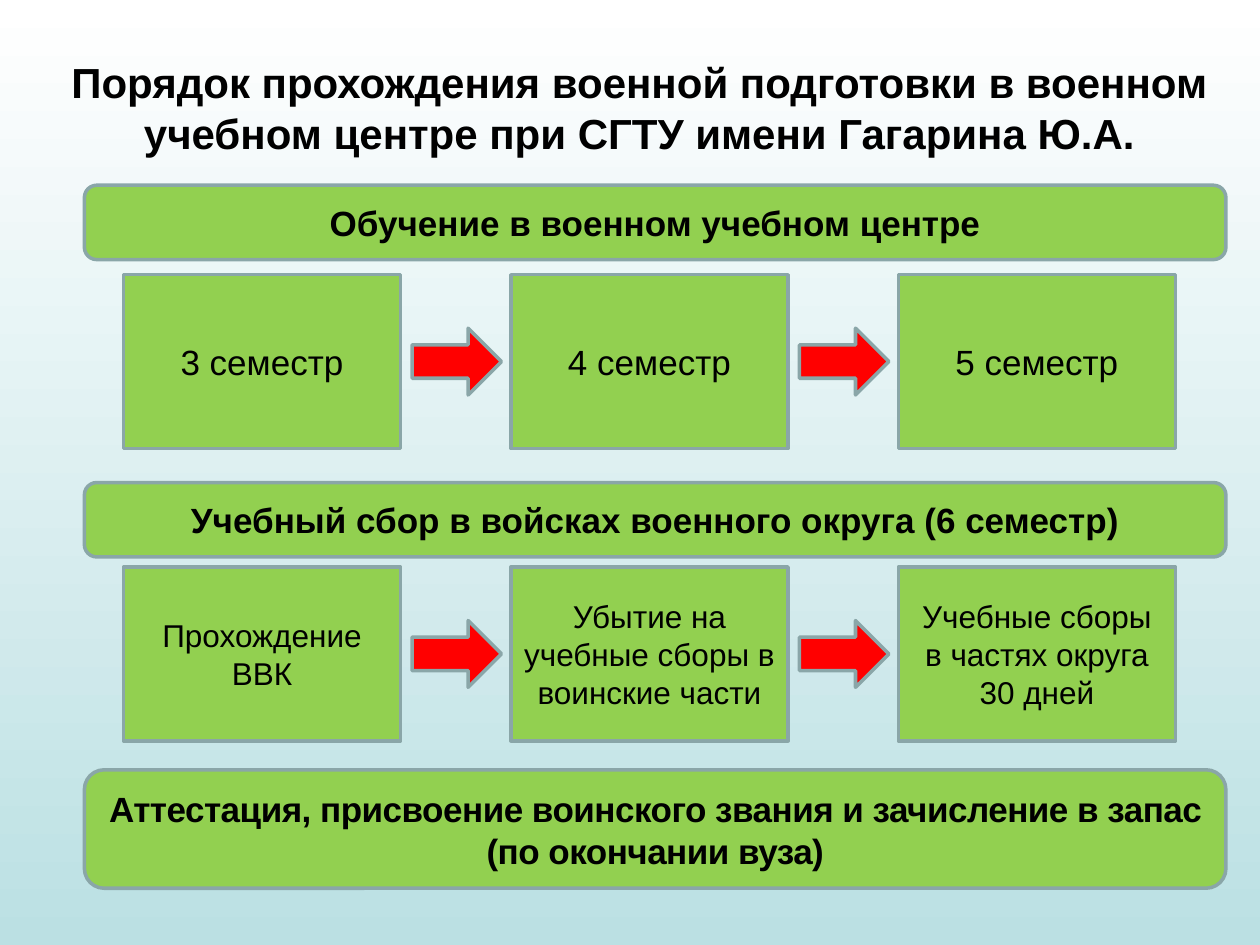
import pptx
import pptx.dml.color
import pptx.enum.shapes
import pptx.enum.text
import pptx.util

Inches = pptx.util.Inches
SHAPES = pptx.enum.shapes.MSO_SHAPE

GREEN, RED, OUTLINE, BLACK = "92D050", "FF0000", "8AA6A8", "000000"
BANNER_LEFT, BANNER_WIDTH = 0.67, 9.06
STEP_LEFT, STEP_PITCH, STEP_WIDTH, STEP_HEIGHT = 0.98, 3.075, 2.2, 1.38
ARROW_OFFSET, ARROW_WIDTH, ARROW_HEIGHT = 2.29, 0.71, 0.53


def color(hex_text):
    return pptx.dml.color.RGBColor.from_string(hex_text)


def set_background(page, top, bottom):
    fill = page.background.fill
    fill.gradient()
    fill.gradient_angle = 270
    for stop, shade in zip(fill.gradient_stops, (top, bottom)):
        stop.color.rgb = color(shade)


def write(box, text, size=20, bold=False, spacing=None):
    """Fill a box with centred text, one paragraph per line; spacing is in points."""
    frame = box.text_frame
    frame.word_wrap = True
    for index, line in enumerate(text.split("\n")):
        para = frame.add_paragraph() if index else frame.paragraphs[0]
        para.alignment = pptx.enum.text.PP_ALIGN.CENTER
        span = para.add_run()
        span.text = line
        span.font.name = "Arial"
        span.font.size = pptx.util.Pt(size)
        span.font.bold = bold
        span.font.color.rgb = color(BLACK)
        if spacing is not None:
            span._r.get_or_add_rPr().set("spc", str(round(spacing * 100)))


def add_title(page, text):
    box = page.shapes.add_textbox(Inches(0.35), Inches(0.4), Inches(9.45), Inches(0.91))
    write(box, text, size=24, bold=True)
    box.text_frame.auto_size = pptx.enum.text.MSO_AUTO_SIZE.SHAPE_TO_FIT_TEXT


def add_block(page, kind, left, top, width, height, fill=GREEN):
    block = page.shapes.add_shape(
        kind, Inches(left), Inches(top), Inches(width), Inches(height))
    block.shadow.inherit = False
    block.fill.solid()
    block.fill.fore_color.rgb = color(fill)
    block.line.color.rgb = color(OUTLINE)
    block.line.width = pptx.util.Pt(2)
    block.text_frame.vertical_anchor = pptx.enum.text.MSO_ANCHOR.MIDDLE
    return block


def add_banner(page, text, top, height=0.59, spacing=None):
    banner = add_block(page, SHAPES.ROUNDED_RECTANGLE,
                       BANNER_LEFT, top, BANNER_WIDTH, height)
    write(banner, text, bold=True, spacing=spacing)


def add_steps(page, texts, top, size):
    """Lay out a row of steps with an arrow between neighbours."""
    arrow_top = top + (STEP_HEIGHT - ARROW_HEIGHT) / 2
    for index, text in enumerate(texts):
        left = STEP_LEFT + index * STEP_PITCH
        step = add_block(page, SHAPES.RECTANGLE, left, top, STEP_WIDTH, STEP_HEIGHT)
        write(step, text, size=size)
        if index < len(texts) - 1:
            add_block(page, SHAPES.RIGHT_ARROW, left + ARROW_OFFSET, arrow_top,
                      ARROW_WIDTH, ARROW_HEIGHT, fill=RED)


def main():
    deck = pptx.Presentation()
    deck.slide_width, deck.slide_height = Inches(10), Inches(7.5)
    page = deck.slides.add_slide(deck.slide_layouts[6])
    set_background(page, "FFFFFF", "BBE0E3")

    add_title(page, "Порядок прохождения военной подготовки в военном "
                    "учебном центре при СГТУ имени Гагарина Ю.А.")
    add_banner(page, "Обучение в военном учебном центре", 1.47)
    add_steps(page, ["3 семестр", "4 семестр", "5 семестр"], 2.18, size=20)
    add_banner(page, "Учебный сбор в войсках военного округа (6 семестр)", 3.83)
    add_steps(page, ["Прохождение ВВК",
                     "Убытие на учебные сборы в воинские части",
                     "Учебные сборы в частях округа\n30 дней"], 4.5, size=18)
    add_banner(page, "Аттестация, присвоение воинского звания и зачисление в запас\n"
                     "(по окончании вуза)", 6.11, height=0.94, spacing=-0.3)

    deck.save("out.pptx")


if __name__ == "__main__":
    main()
